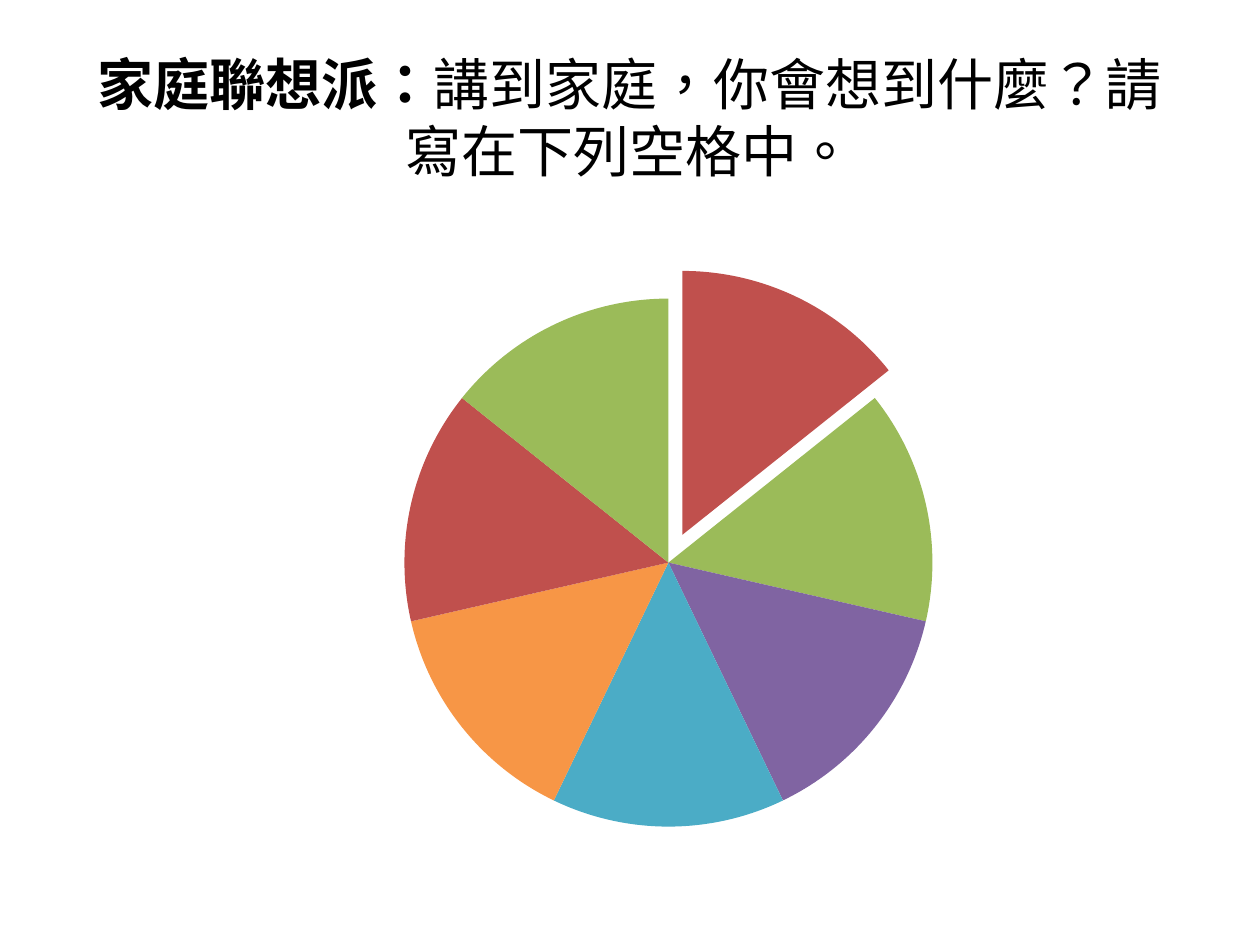
from pptx import Presentation
from pptx.dml.color import RGBColor as RGB
from pptx.enum.shapes import MSO_SHAPE as SHAPE
from pptx.enum.text import MSO_ANCHOR as ANCHOR, PP_ALIGN as ALIGN
from pptx.util import Inches, Pt
from lxml.etree import SubElement
from pptx.oxml.ns import qn

FONT = "Noto Sans CJK JP"


def paint(fmt, color):
    fmt.solid()
    fmt.fore_color.rgb = RGB.from_string(color)


deck = Presentation()
deck.slide_width, deck.slide_height = Inches(10), Inches(7.5)
wide, high = deck.slide_width, deck.slide_height
slide = deck.slides.add_slide(deck.slide_layouts[6])
paint(slide.background.fill, "FFFFFF")

# Title: bold lead, then the question
box = slide.shapes.add_textbox(int(wide * 0.05), int(high * 0.04),
                               int(wide * 0.9), Inches(1.25))
frame = box.text_frame
frame.word_wrap = True
frame.vertical_anchor = ANCHOR.MIDDLE
para = frame.paragraphs[0]
para.alignment = ALIGN.CENTER
for text, bold in (("家庭聯想派：", True),
                   ("講到家庭，你會想到什麼？請寫在下列空格中。", False)):
    run = para.add_run()
    run.text = text
    run.font.size, run.font.bold, run.font.name = Pt(32), bold, FONT
    paint(run.font.fill, "000000")
    props = run.font._element
    props.set("lang", "zh-TW")
    SubElement(props, qn("a:ea")).set("typeface", FONT)

# Pie: equal slices clockwise from the top, the first one pulled out
colors = ["C0504D", "9BBB59", "8064A2", "4BACC6", "F79646", "C0504D", "9BBB59"]
left, top, size = 3.21, 2.37, 4.19
shift, lift = 0.11, 0.22
step = 360 / len(colors)
unit = 0.6  # adjustment value per degree
pie = slide.shapes.add_group_shape()
for i, color in enumerate(colors):
    out = i == 0
    slice = pie.shapes.add_shape(
        SHAPE.PIE, Inches(left + shift * out), Inches(top - lift * out),
        Inches(size), Inches(size))
    start = 270 + i * step
    slice.adjustments[0] = start % 360 * unit
    slice.adjustments[1] = (start + step) % 360 * unit
    slice.shadow.inherit = False
    paint(slice.fill, color)
    slice.line.fill.background()

deck.save("out.pptx")
